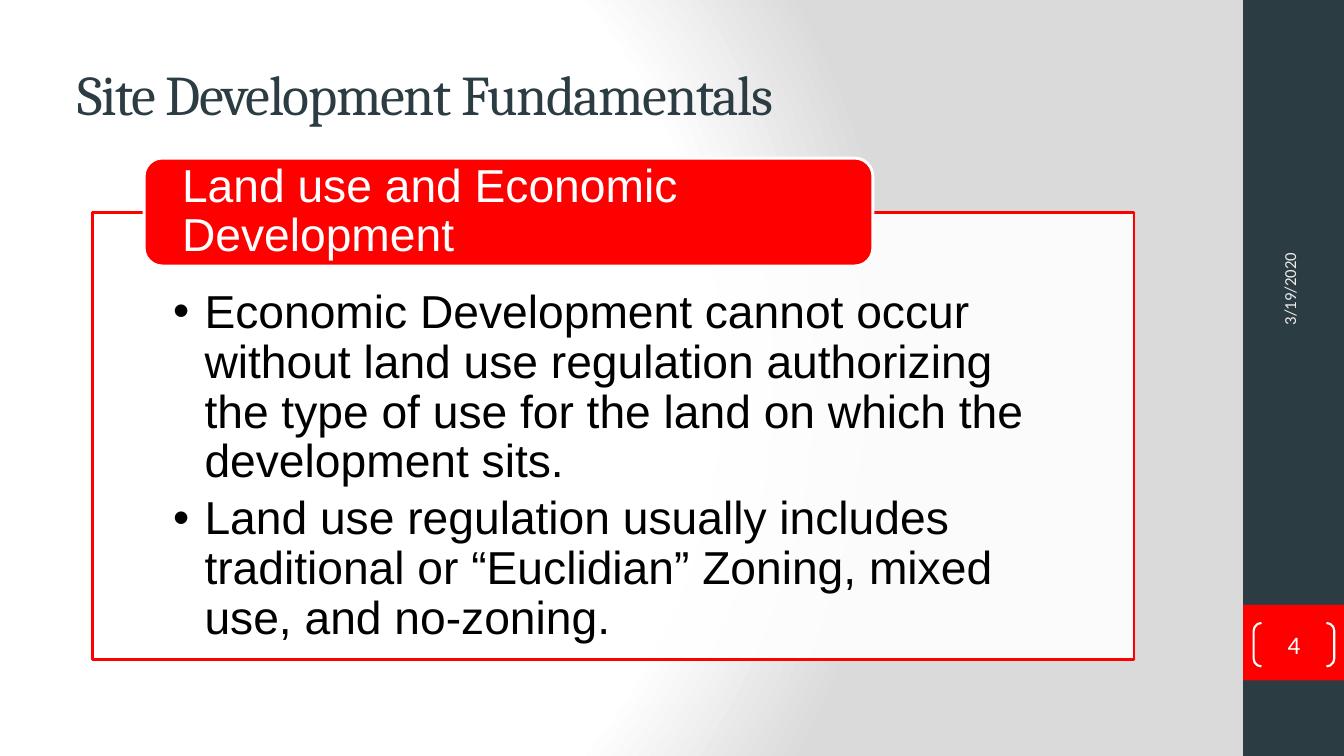
from pptx import Presentation
from pptx.dml.color import RGBColor
from pptx.enum.shapes import MSO_SHAPE
from pptx.enum.text import MSO_ANCHOR, MSO_AUTO_SIZE, PP_ALIGN
from pptx.oxml import parse_xml
from pptx.oxml.ns import nsdecls, qn
from pptx.oxml.xmlchemy import OxmlElement
from pptx.util import Pt

COLORS = {"slate": "2C3C43", "red": "FF0000", "white": "FFFFFF",
          "gray": "DADADA", "date": "EBEBEB", "black": "000000"}
HEADING, BODY, FOOTER = "Cambria", "Arial", "Calibri"


class SlideBuilder:
    def __init__(self, width, height):
        self.deck = Presentation()
        self.deck.slide_width, self.deck.slide_height = Pt(width), Pt(height)
        self.slide = self.deck.slides.add_slide(self.deck.slide_layouts[1])

    def color(self, name):
        return RGBColor.from_string(COLORS[name])

    def background(self, stops):
        self.slide.background.fill.gradient()
        gradient = self.slide.element.find(".//" + qn("a:gradFill"))
        stop_xml = "".join(
            f'<a:gs pos="{position * 1000}"><a:srgbClr val="{COLORS[name]}"/></a:gs>'
            for position, name in stops)
        radial = parse_xml(
            f'<a:gradFill {nsdecls("a")} rotWithShape="1"><a:gsLst>{stop_xml}</a:gsLst>'
            '<a:path path="circle"><a:fillToRect l="20000" t="50000" r="100000" b="50000"/>'
            '</a:path></a:gradFill>')
        gradient.getparent().replace(gradient, radial)

    def place(self, shape, box):
        shape.left, shape.top, shape.width, shape.height = map(Pt, box)

    def paint(self, shape, fill=None, line=None, weight=2, opacity=100):
        if fill:
            shape.fill.solid()
            shape.fill.fore_color.rgb = self.color(fill)
            if opacity < 100:
                alpha = OxmlElement("a:alpha")
                alpha.set("val", str(opacity * 1000))
                shape.element.spPr.find(".//" + qn("a:srgbClr")).append(alpha)
        else:
            shape.fill.background()
        if line:
            shape.line.color.rgb = self.color(line)
            shape.line.width = Pt(weight)
        else:
            shape.line.fill.background()

    def set_text(self, shape, lines, font, size, color, insets=(7.2, 3.6, 7.2, 3.6),
                 anchor=MSO_ANCHOR.MIDDLE, align=PP_ALIGN.LEFT, spacing=1.0,
                 after=0, bullet_indent=0, tracking=0):
        frame = shape.text_frame
        frame.text = "\n".join(lines)
        frame.word_wrap = True
        frame.auto_size = MSO_AUTO_SIZE.NONE
        frame.vertical_anchor = anchor
        (frame.margin_left, frame.margin_top,
         frame.margin_right, frame.margin_bottom) = map(Pt, insets)
        for paragraph in frame.paragraphs:
            paragraph.alignment = align
            paragraph.line_spacing = spacing
            paragraph.space_before, paragraph.space_after = Pt(0), Pt(after)
            if bullet_indent:
                self.bullet(paragraph, bullet_indent)
            for run in paragraph.runs:
                run.font.name, run.font.size = font, Pt(size)
                run.font.color.rgb = self.color(color)
                if tracking:
                    run.font._element.set("spc", str(tracking * 100))

    def bullet(self, paragraph, indent):
        paragraph.level = 1
        properties = paragraph._p.get_or_add_pPr()
        properties.set("marL", str(Pt(indent)))
        properties.set("indent", str(-Pt(indent)))
        mark = OxmlElement("a:buChar")
        mark.set("char", "•")
        properties.append(mark)

    def title(self, box, text, **style):
        heading = self.slide.shapes.title
        self.place(heading, box)
        self.set_text(heading, [text], **style)

    def list_panel(self, box, items, paint, **style):
        panel = self.slide.placeholders[1]
        self.place(panel, box)
        self.paint(panel, **paint)
        self.set_text(panel, items, **style)

    def shape(self, kind, box, adjust=None, **paint):
        shape = self.slide.shapes.add_shape(kind, *map(Pt, box))
        shape.shadow.inherit = False
        if adjust is not None:
            shape.adjustments[0] = adjust
        self.paint(shape, **paint)
        return shape

    def label(self, box, text, rotation=0, **style):
        label = self.slide.shapes.add_textbox(*map(Pt, box))
        label.rotation = rotation
        self.set_text(label, [text], **style)


def main():
    page = SlideBuilder(960, 540)
    page.background([(0, "white"), (75, "white"), (100, "gray")])

    # Side band with the page number block
    page.shape(MSO_SHAPE.RECTANGLE, (888, 0, 72, 540), fill="slate")
    page.shape(MSO_SHAPE.RECTANGLE, (888, 432, 72, 54), fill="red")

    # Title
    page.title((48, 21.6, 800, 90), "Site Development Fundamentals",
               font=HEADING, size=40, color="slate", tracking=-1)

    # Framed list
    page.list_panel(
        (66, 152, 744, 319),
        ["Economic Development cannot occur without land use regulation authorizing "
         "the type of use for the land on which the development sits.",
         "Land use regulation usually includes traditional or “Euclidian” Zoning, "
         "mixed use, and no-zoning."],
        paint={"fill": "white", "line": "red", "opacity": 90},
        font=BODY, size=33, color="black", insets=(57.6, 54, 57.6, 18.7),
        anchor=MSO_ANCHOR.TOP, spacing=0.9, after=5, bullet_indent=22.5)

    # Heading tab over the frame
    topic = page.shape(MSO_SHAPE.ROUNDED_RECTANGLE, (103, 113, 520.5, 77),
                       fill="red", line="white")
    page.set_text(topic, ["Land use and Economic Development"], font=BODY, size=33,
                  color="white", insets=(23.3, 0, 23.3, 0), spacing=0.9)

    # Date and page number
    page.label((825, 124.5, 192, 38), "3/19/2020", rotation=270,
               font=FOOTER, size=12, color="date")
    number = page.shape(MSO_SHAPE.DOUBLE_BRACKET, (895.5, 445, 57.6, 31),
                        adjust=0.18, line="white", weight=1.5)
    page.set_text(number, ["4"], font=FOOTER, size=18, color="white",
                  insets=(0, 0, 0, 0), align=PP_ALIGN.CENTER)

    page.deck.save("out.pptx")


if __name__ == "__main__":
    main()
